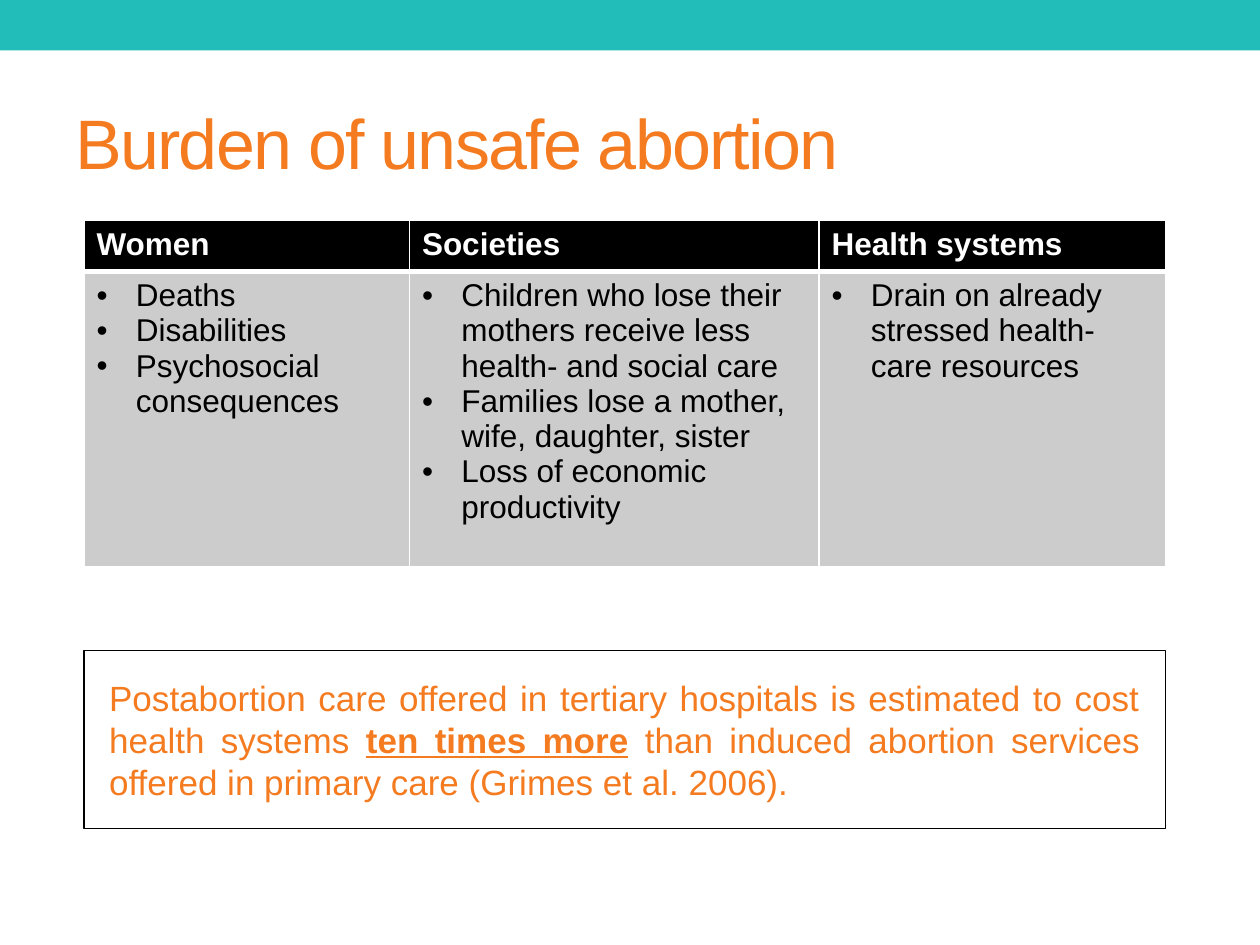
from lxml.etree import SubElement
from pptx import Presentation
from pptx.dml.color import RGBColor
from pptx.enum.shapes import MSO_SHAPE
from pptx.enum.text import MSO_ANCHOR, PP_ALIGN
from pptx.oxml.ns import qn
from pptx.util import Pt

TEAL, ORANGE, BLACK, WHITE, GREY = "22BCB9", "F47B20", "000000", "FFFFFF", "CCCCCC"
FONT = "Arial"
COLUMN_WIDTHS = [186, 234, 198]
ROW_HEIGHTS = [29.2, 168.4]
BURDENS = {
    "Women": ["Deaths", "Disabilities", "Psychosocial consequences"],
    "Societies": [
        "Children who lose their mothers receive less health- and social care",
        "Families lose a mother, wife, daughter, sister",
        "Loss of economic productivity",
    ],
    "Health systems": ["Drain on already stressed health-care resources"],
}
COST_STATEMENT = [
    ("Postabortion care offered in tertiary hospitals is estimated to cost health systems ", False),
    ("ten times more", True),
    (" than induced abortion services offered in primary care (Grimes et al. 2006).", False),
]


def color(value):
    return RGBColor.from_string(value)


def format_run(run, size, value, bold=False):
    run.font.name = FONT
    run.font.size = Pt(size)
    run.font.bold = bold
    run.font.color.rgb = color(value)


def add_rectangle(slide, left, top, width, height):
    shape = slide.shapes.add_shape(
        MSO_SHAPE.RECTANGLE, Pt(left), Pt(top), Pt(width), Pt(height)
    )
    shape.shadow.inherit = False
    return shape


def add_band(slide, left, top, width, height):
    band = add_rectangle(slide, left, top, width, height)
    band.fill.solid()
    band.fill.fore_color.rgb = color(TEAL)
    band.line.fill.background()


def add_title(slide, left, top, width, height):
    title = slide.shapes.add_textbox(Pt(left), Pt(top), Pt(width), Pt(height))
    text_frame = title.text_frame
    text_frame.word_wrap = True
    text_frame.vertical_anchor = MSO_ANCHOR.MIDDLE
    text_frame.text = "Burden of unsafe abortion"
    run = text_frame.paragraphs[0].runs[0]
    format_run(run, 40, ORANGE)
    run.font._element.set("spc", "-100")


def set_borders(cell, widths):
    properties = cell._tc.get_or_add_tcPr()
    for position, (side, width) in enumerate(widths.items()):
        border = SubElement(properties, qn(f"a:ln{side}"), w=str(Pt(width)))
        fill = SubElement(border, qn("a:solidFill"))
        SubElement(fill, qn("a:srgbClr"), val=WHITE)
        properties.insert(position, border)


def add_bullet(paragraph):
    properties = paragraph._p.get_or_add_pPr()
    properties.set("marL", str(Pt(22.5)))
    properties.set("indent", str(Pt(-22.5)))
    SubElement(properties, qn("a:buFont"), typeface=FONT)
    SubElement(properties, qn("a:buChar"), char="•")


def fill_cell(cell, lines, is_header):
    cell.fill.solid()
    cell.fill.fore_color.rgb = color(BLACK if is_header else GREY)
    top, bottom = (1, 3) if is_header else (3, 1)
    set_borders(cell, {"L": 1, "R": 1, "T": top, "B": bottom})
    cell.text_frame.text = "\n".join(lines)
    for paragraph in cell.text_frame.paragraphs:
        format_run(paragraph.runs[0], 18, WHITE if is_header else BLACK, is_header)
        if not is_header:
            add_bullet(paragraph)


def add_burden_table(slide, left, top):
    table = slide.shapes.add_table(
        len(ROW_HEIGHTS), len(COLUMN_WIDTHS), Pt(left), Pt(top),
        Pt(sum(COLUMN_WIDTHS)), Pt(sum(ROW_HEIGHTS)),
    ).table
    for row, height in zip(table.rows, ROW_HEIGHTS):
        row.height = Pt(height)
    for index, (heading, items) in enumerate(BURDENS.items()):
        table.columns[index].width = Pt(COLUMN_WIDTHS[index])
        fill_cell(table.cell(0, index), [heading], True)
        fill_cell(table.cell(1, index), items, False)


def add_cost_box(slide, left, top, width, height):
    box = add_rectangle(slide, left, top, width, height)
    box.fill.background()
    box.line.color.rgb = color(BLACK)
    box.line.width = Pt(0.75)
    text_frame = box.text_frame
    text_frame.word_wrap = True
    text_frame.vertical_anchor = MSO_ANCHOR.MIDDLE
    text_frame.margin_left = text_frame.margin_right = Pt(14.4)
    text_frame.margin_top = text_frame.margin_bottom = Pt(14.4)
    paragraph = text_frame.paragraphs[0]
    paragraph.alignment = PP_ALIGN.JUSTIFY
    for text, emphasized in COST_STATEMENT:
        run = paragraph.add_run()
        run.text = text
        format_run(run, 20, ORANGE, emphasized)
        run.font.underline = emphasized


def main():
    presentation = Presentation()
    presentation.slide_width = Pt(720)
    presentation.slide_height = Pt(540)
    slide = presentation.slides.add_slide(presentation.slide_layouts[6])
    add_band(slide, 0, 0, 720, 28.8)
    add_title(slide, 36, 42, 648, 78)
    add_burden_table(slide, 48, 126)
    add_cost_box(slide, 48, 371.8, 618, 101.5)
    presentation.save("out.pptx")


if __name__ == "__main__":
    main()
